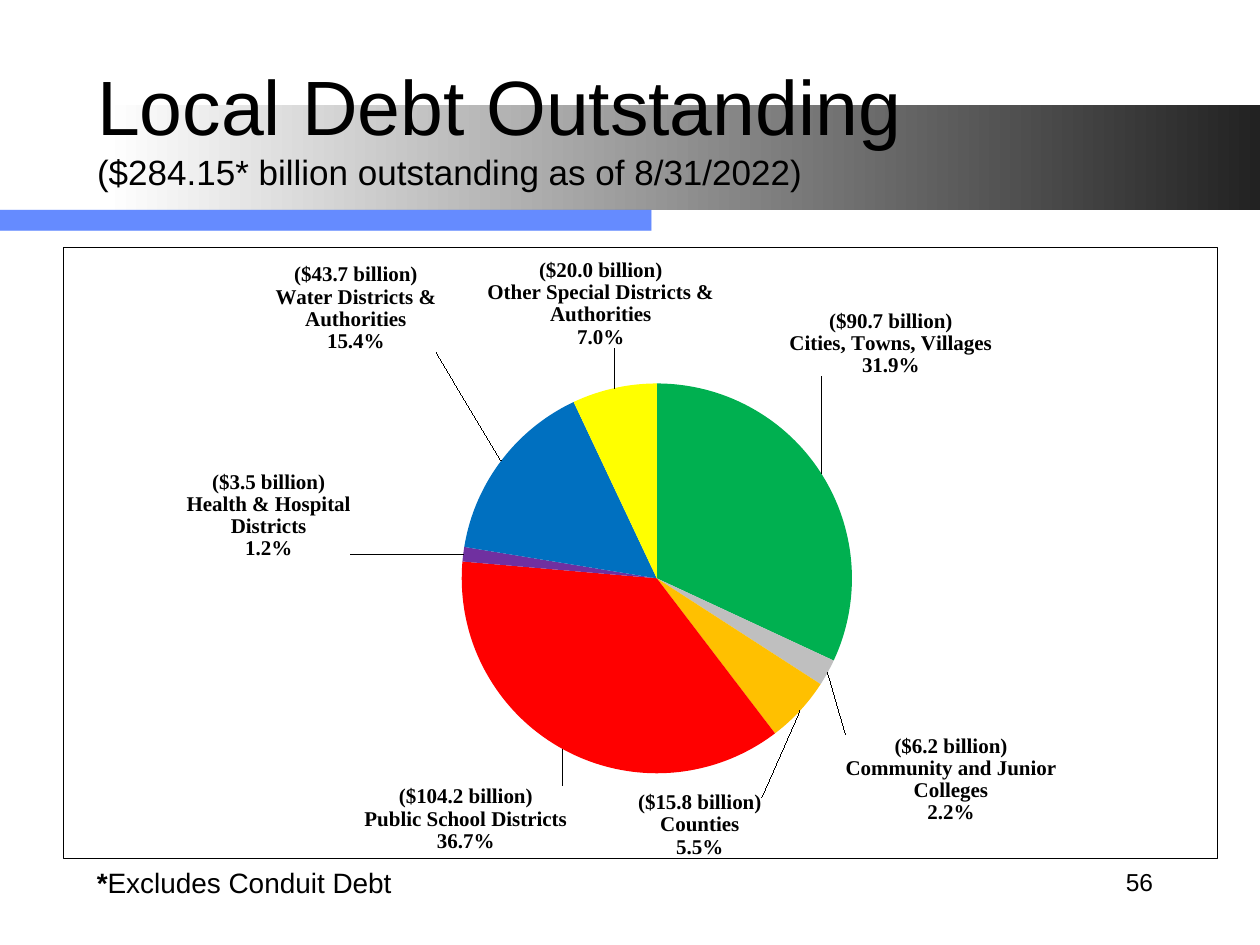
from dataclasses import dataclass

from lxml.etree import SubElement
from pptx import Presentation
from pptx.chart.data import CategoryChartData
from pptx.dml.color import RGBColor
from pptx.enum.chart import XL_CHART_TYPE as ChartType, XL_LABEL_POSITION as LabelPosition
from pptx.enum.shapes import MSO_SHAPE as Preset
from pptx.enum.text import MSO_ANCHOR as Anchor, MSO_AUTO_SIZE as AutoSize, PP_ALIGN as Align
from pptx.oxml import parse_xml
from pptx.oxml.ns import nsdecls, qn
from pptx.util import Inches, Pt


@dataclass(frozen=True)
class Theme:
    """Colours, fonts and type sizes of the slide."""
    ink: str = "000000"
    paper: str = "FFFFFF"
    band_end: str = "222222"
    accent: str = "3366FF"
    font: str = "Arial"
    label_font: str = "Times New Roman"
    title: int = 44
    subtitle: int = 20
    note: int = 16
    number: int = 14
    label: int = 12
    chart: int = 10


THEME = Theme()
WIDTH, HEIGHT = 10, 7.5
PLOT = {"x": 0.159, "y": 0.223, "w": 0.71, "h": 0.638}
SLICES = [
    ("($90.7 billion)\nCities, Towns, Villages", 31.9, "00B050", (-0.033, -0.152)),
    ("($6.2 billion)\nCommunity and Junior Colleges", 2.2, "BFBFBF", (0.01, 0.096)),
    ("($15.8 billion)\nCounties", 5.5, "FFC000", (-0.145, 0.134)),
    ("($104.2 billion)\nPublic School Districts", 36.7, "FF0000", (0.007, 0.049)),
    ("($3.5 billion)\nHealth & Hospital Districts", 1.2, "7030A0", (-0.091, 0.011)),
    ("($43.7 billion)\nWater Districts & Authorities", 15.4, "0070C0", (-0.051, -0.17)),
    ("($20.0 billion)\nOther Special Districts & Authorities", 7, "FFFF00", (0.088, -0.054)),
]


def place(left, top, width, height):
    """Turn shares of the slide into a box of lengths."""
    return [Inches(share * side) for share, side in
            zip((left, top, width, height), (WIDTH, HEIGHT) * 2)]


def apply(target, values):
    """Set each attribute of a target from a dict."""
    for name, value in values.items():
        setattr(target, name, value)


def style(font, size, name=THEME.font, bold=False):
    """Format a font in the ink colour."""
    apply(font, {"size": Pt(size), "name": name, "bold": bold})
    font.color.rgb = RGBColor.from_string(THEME.ink)


def add_run(paragraph, text, size, bold=False):
    """Add a formatted run to a paragraph."""
    run = paragraph.add_run()
    run.text = text
    style(run.font, size, bold=bold)


def add_bar(slide, box):
    """Add a plain rectangle behind the text."""
    shape = slide.shapes.add_shape(Preset.RECTANGLE, *box)
    shape.shadow.inherit = False
    shape.line.fill.background()
    return shape


def add_band(slide, box):
    """Add the gradient band behind the title."""
    fill = add_bar(slide, box).fill
    fill.gradient()
    fill.gradient_angle = 0
    for stop, color, position in zip(fill.gradient_stops, (THEME.paper, THEME.band_end), (0, 1)):
        stop.color.rgb = RGBColor.from_string(color)
        stop.position = position


def add_accent(slide, box):
    """Add two half-transparent bars, one on the other."""
    for _ in range(2):
        fill = add_bar(slide, box).fill
        fill.solid()
        fill.fore_color.rgb = RGBColor.from_string(THEME.accent)
        color = fill._xPr.find(".//" + qn("a:srgbClr"))
        SubElement(color, qn("a:alpha")).set("val", "50000")


def fill_title(slide, box):
    """Place the title and its subtitle line, in front of the bars."""
    title = slide.shapes.title
    apply(title, dict(zip(("left", "top", "width", "height"), box)))
    frame = title.text_frame
    apply(frame, {"vertical_anchor": Anchor.MIDDLE, "word_wrap": True, "auto_size": AutoSize.NONE})
    paragraph = frame.paragraphs[0]
    paragraph.alignment = Align.LEFT
    add_run(paragraph, "Local Debt Outstanding", THEME.title)
    paragraph.add_line_break()
    add_run(paragraph, "($284.15* billion outstanding as of 8/31/2022)", THEME.subtitle)
    slide.shapes._spTree.append(title._element)


def layout_xml(values, inner=False):
    """Return a manual chart layout."""
    parts = '<c:layoutTarget val="inner"/>' if inner else ""
    if inner:
        parts += '<c:xMode val="edge"/><c:yMode val="edge"/>'
    parts += "".join(f'<c:{key} val="{value}"/>' for key, value in values.items())
    return parse_xml(f'<c:layout {nsdecls("c")}><c:manualLayout>{parts}</c:manualLayout></c:layout>')


def frame_chart(chart):
    """Give the chart its background, border and plot position."""
    chart_part = chart._chartSpace.find(qn("c:chart"))
    chart_part.addnext(parse_xml(
        f'<c:spPr {nsdecls("c", "a")}><a:solidFill><a:srgbClr val="{THEME.paper}"/></a:solidFill>'
        f'<a:ln w="{Pt(0.75)}"><a:solidFill><a:srgbClr val="{THEME.ink}"/></a:solidFill></a:ln></c:spPr>'))
    plot_area = chart_part.find(qn("c:plotArea"))
    for layout in plot_area.findall(qn("c:layout")):
        plot_area.remove(layout)
    plot_area.insert(0, layout_xml(PLOT, inner=True))


def label_slice(point, offset):
    """Label a slice with its category and share, moved by an offset."""
    label = point.data_label
    style(label.font, THEME.label, THEME.label_font, True)
    label.position = LabelPosition.OUTSIDE_END
    element = label._dLbl
    element.find(qn("c:idx")).addnext(layout_xml(dict(zip("xy", offset))))
    element.find(qn("c:txPr")).addprevious(parse_xml(
        f'<c:numFmt {nsdecls("c")} formatCode="0.0%" sourceLinked="0"/>'))
    for flag, shown in {"showVal": 0, "showCatName": 1, "showPercent": 1}.items():
        element.find(qn(f"c:{flag}")).set("val", str(shown))
    separator = SubElement(element, qn("c:separator"))
    separator.text = "\n"


def add_debt_pie(slide, box):
    """Add the pie of debt by type of issuer."""
    data = CategoryChartData()
    data.categories = [name for name, *_ in SLICES]
    data.add_series("Series 1", [value for _, value, *_ in SLICES])
    chart = slide.shapes.add_chart(ChartType.PIE, *box, data).chart
    apply(chart, {"has_legend": False, "has_title": False})
    style(chart.font, THEME.chart)
    frame_chart(chart)
    plot = chart.plots[0]
    plot.vary_by_categories = True
    series = plot.series[0]
    labels = series.data_labels
    apply(labels, {"show_category_name": True, "show_percentage": True, "show_value": False,
                   "number_format": "0.0%", "number_format_is_linked": False})
    style(labels.font, THEME.label, THEME.label_font, True)
    for index, (_, _, color, offset) in enumerate(SLICES):
        point = series.points[index]
        point.format.fill.solid()
        point.format.fill.fore_color.rgb = RGBColor.from_string(color)
        point.format.line.fill.background()
        label_slice(point, offset)


def add_text(slide, box, runs, size, **frame_values):
    """Add a text box of one paragraph from (text, bold) runs."""
    frame = slide.shapes.add_textbox(*box).text_frame
    apply(frame, frame_values)
    paragraph = frame.paragraphs[0]
    for text, bold in runs:
        add_run(paragraph, text, size, bold)
    return paragraph


def add_footer(slide):
    """Add the slide number and the footnote."""
    number = add_text(slide, place(0.717, 0.9, 0.208, 0.067), [("56", False)], THEME.number,
                      vertical_anchor=Anchor.MIDDLE, word_wrap=True)
    number.alignment = Align.RIGHT
    add_text(slide, place(0.067, 0.909, 0.417, 0.049),
             [("*", True), ("Excludes Conduit Debt", False)], THEME.note,
             word_wrap=True, auto_size=AutoSize.SHAPE_TO_FIT_TEXT)


def main():
    """Build and save the slide."""
    presentation = Presentation()
    apply(presentation, {"slide_width": Inches(WIDTH), "slide_height": Inches(HEIGHT)})
    slide = presentation.slides.add_slide(presentation.slide_layouts[5])
    add_band(slide, place(1 / 12, 1 / 9, 11 / 12, 1 / 9))
    add_accent(slide, place(0, 2 / 9, 0.517, 0.022))
    add_debt_pie(slide, place(0.05, 0.261, 0.917, 0.648))
    fill_title(slide, place(0.067, 0.044, 0.85, 0.178))
    add_footer(slide)
    presentation.save("out.pptx")


if __name__ == "__main__":
    main()
